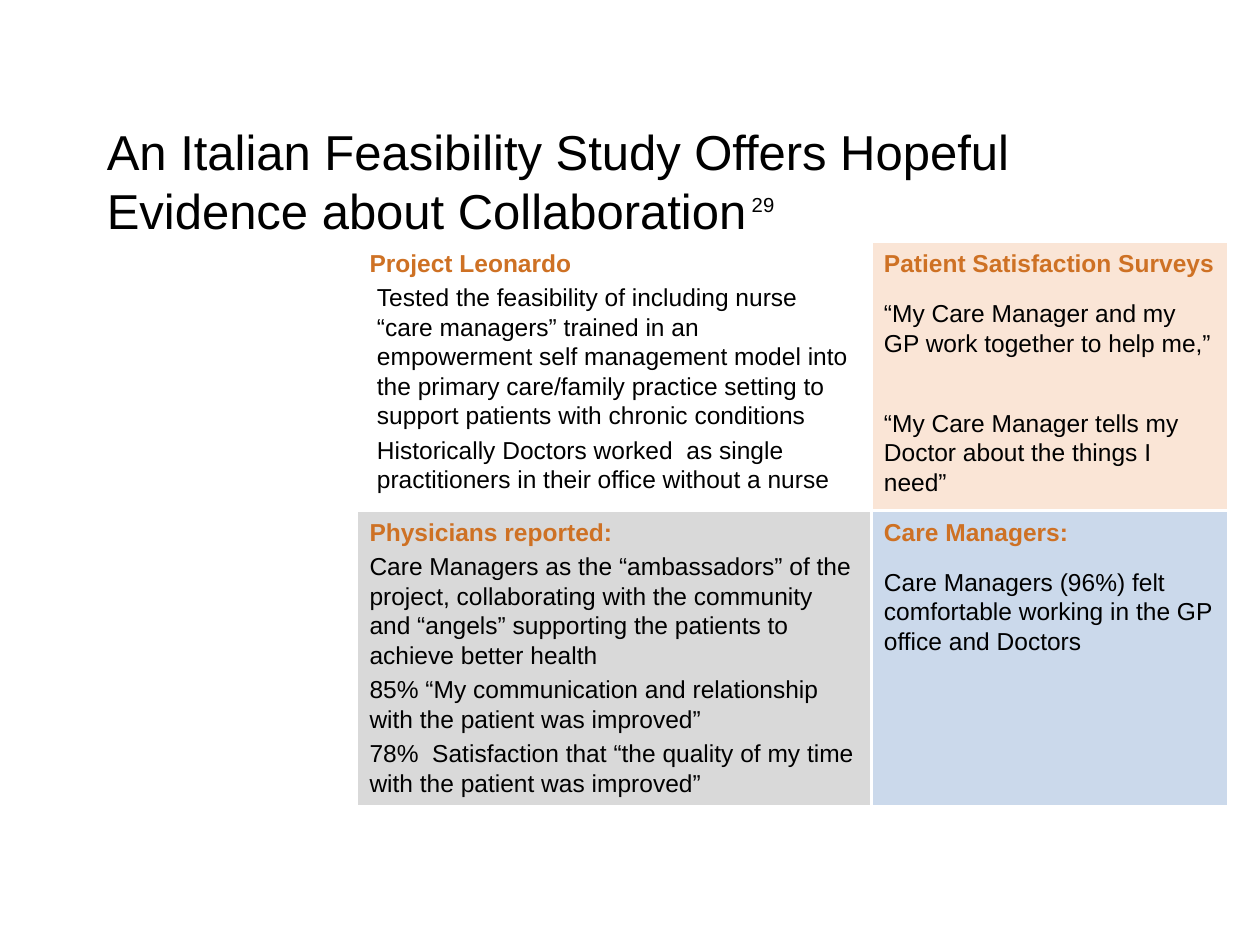
from pptx import Presentation
from pptx.dml.color import RGBColor
from pptx.enum.shapes import MSO_SHAPE
from pptx.enum.text import MSO_ANCHOR, MSO_AUTO_SIZE, PP_ALIGN
from pptx.util import Cm, Pt

COLOURS = {
    "heading": "CE7124",
    "text": "000000",
    "border": "FFFFFF",
    "project": "FFFFFF",
    "patients": "FAE5D6",
    "physicians": "D9D9D9",
    "managers": "CBD9EB",
}
COLUMNS = [(7.2, 10.37), (17.57, 7.2)]
ROWS = [(4.87, 5.42), (10.29, 5.97)]

PANELS = [
    ("project", 0, 0, "Project Leonardo", [3, 3], 0.15, [
        "Tested the feasibility of including nurse “care managers” trained in an empowerment "
        "self management model into the primary care/family practice setting to support "
        "patients with chronic conditions",
        "Historically Doctors worked  as single practitioners in their office without a nurse",
    ]),
    ("patients", 1, 0, "Patient Satisfaction Surveys", [12, 29], 0, [
        "“My Care Manager and my GP work together to help me,”",
        "“My Care Manager tells my Doctor about the things I need”",
    ]),
    ("physicians", 0, 1, "Physicians reported:", [3, 3, 3], 0, [
        "Care Managers as the “ambassadors” of the project, collaborating with the community "
        "and “angels” supporting the patients to achieve better health",
        "85% “My communication and relationship with the patient was improved”",
        "78%  Satisfaction that “the quality of my time with the patient was improved”",
    ]),
    ("managers", 1, 1, "Care Managers:", [12], 0, [
        "Care Managers (96%) felt comfortable working in the GP office and Doctors",
    ]),
]


def colour(name):
    return RGBColor.from_string(COLOURS[name])


def add_text(para, text, size=14, color="text", bold=False, before=0, indent=0, baseline=None):
    para.alignment = PP_ALIGN.LEFT
    para.line_spacing = 1.0
    para.space_before = Pt(before)
    if indent:
        para._p.get_or_add_pPr().set("marL", str(Cm(indent)))
    span = para.add_run()
    span.text = text
    span.font.name = "Arial"
    span.font.size = Pt(size)
    span.font.bold = bold
    span.font.color.rgb = colour(color)
    if baseline:
        span.font._element.set("baseline", str(baseline * 1000))


def prepare_frame(box):
    frame = box.text_frame
    frame.word_wrap = True
    frame.auto_size = MSO_AUTO_SIZE.NONE
    frame.vertical_anchor = MSO_ANCHOR.TOP
    return frame


def add_title(page):
    title = page.shapes.title
    title.left, title.top, title.width, title.height = Cm(1.9), Cm(2.33), Cm(22.23), Cm(2.33)
    para = prepare_frame(title).paragraphs[0]
    add_text(para, "An Italian Feasibility Study Offers Hopeful Evidence about Collaboration", size=28)
    add_text(para, " 29", size=20, baseline=50)


def add_panel(page, fill, column, row, heading, gaps, indent, texts):
    left, width = COLUMNS[column]
    top, height = ROWS[row]
    box = page.shapes.add_shape(MSO_SHAPE.RECTANGLE, Cm(left), Cm(top), Cm(width), Cm(height))
    box.shadow.inherit = False
    box.fill.solid()
    box.fill.fore_color.rgb = colour(fill)
    box.line.color.rgb = colour("border")
    box.line.width = Pt(1.5)
    frame = prepare_frame(box)
    add_text(frame.paragraphs[0], heading, color="heading", bold=True)
    for text, gap in zip(texts, gaps):
        add_text(frame.add_paragraph(), text, before=gap, indent=indent)


def main():
    deck = Presentation()
    deck.slide_width, deck.slide_height = Cm(25.4), Cm(19.05)
    page = deck.slides.add_slide(deck.slide_layouts[5])
    add_title(page)
    for panel in PANELS:
        add_panel(page, *panel)
    deck.save("out.pptx")


if __name__ == "__main__":
    main()
